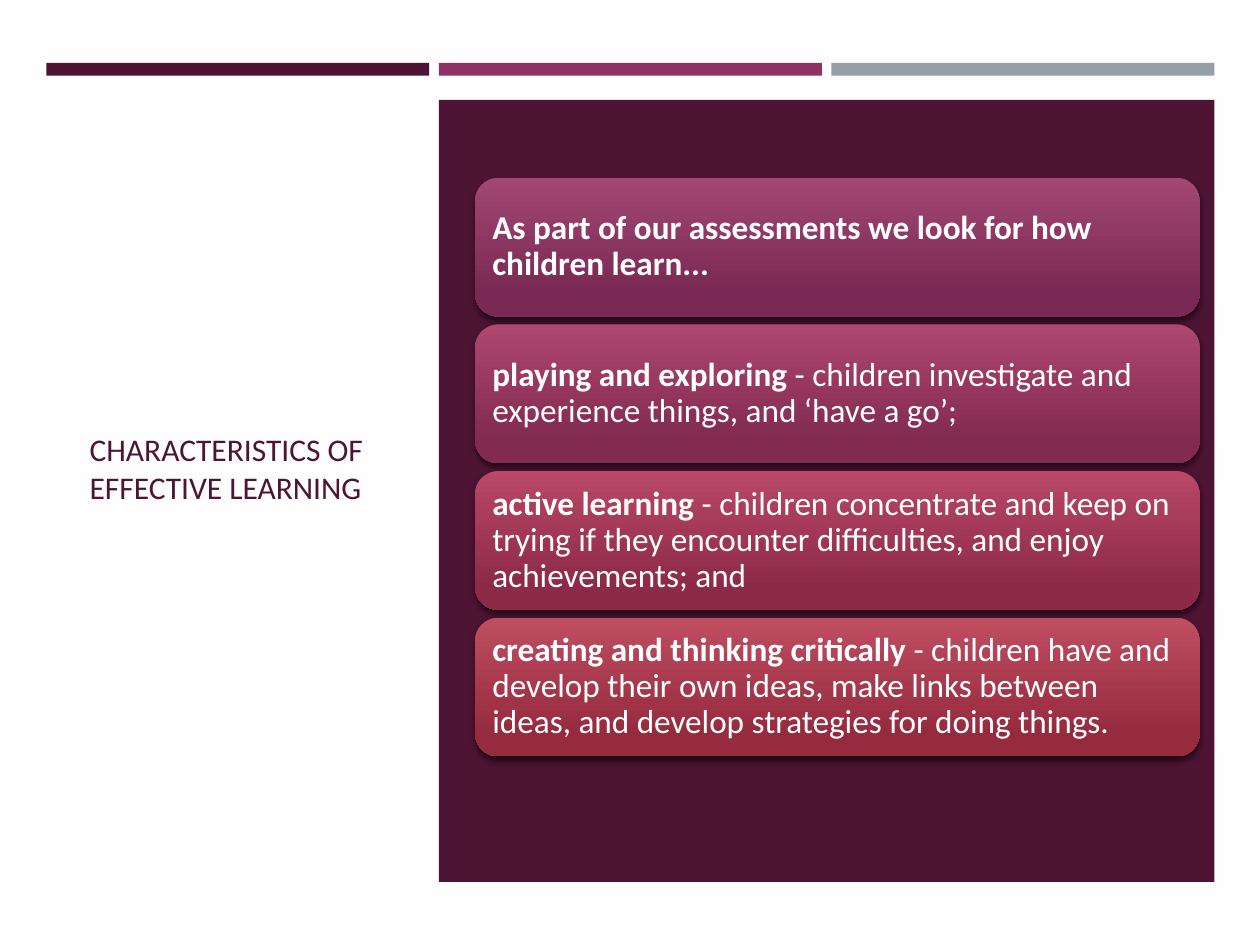
import pptx
import pptx.util
import pptx.dml.color
import pptx.enum.shapes
import pptx.enum.text
import pptx.oxml
import pptx.oxml.ns

Pt = pptx.util.Pt
RGBColor = pptx.dml.color.RGBColor
MSO_SHAPE = pptx.enum.shapes.MSO_SHAPE
MSO_ANCHOR = pptx.enum.text.MSO_ANCHOR
PP_ALIGN = pptx.enum.text.PP_ALIGN

FONT = "Calibri"
PAPER = RGBColor(0xFF, 0xFE, 0xFF)
WHITE = RGBColor(0xFF, 0xFF, 0xFF)
PLUM = RGBColor(0x4D, 0x14, 0x34)
MAGENTA = RGBColor(0x90, 0x31, 0x63)
GREY = RGBColor(0x96, 0x9F, 0xA7)

BAR_COLORS = [PLUM, MAGENTA, GREY]
BAR_LEFT, BAR_TOP, BAR_WIDTH, BAR_HEIGHT, BAR_STEP = 26.5, 36, 218.8, 7.2, 224.3
CARD_LEFT, CARD_TOP, CARD_WIDTH, CARD_HEIGHT, CARD_STEP = 271.5, 101.6, 414, 79.3, 83.8

CARDS = [
    (RGBColor(0xA2, 0x47, 0x74), RGBColor(0x79, 0x29, 0x53),
     "As part of our assessments we look for how children learn...", ""),
    (RGBColor(0xAE, 0x47, 0x6F), RGBColor(0x82, 0x2A, 0x4F),
     "playing and exploring ",
     "- children investigate and experience things, and ‘have a go’;"),
    (RGBColor(0xB9, 0x48, 0x67), RGBColor(0x8C, 0x2A, 0x48),
     "active learning ",
     "- children concentrate and keep on trying if they encounter difficulties, "
     "and enjoy achievements; and"),
    (RGBColor(0xBF, 0x4E, 0x61), RGBColor(0x96, 0x2A, 0x3F),
     "creating and thinking critically ",
     "- children have and develop their own ideas, make links between ideas, "
     "and develop strategies for doing things."),
]


def set_font(p, size, color):
    p.alignment = PP_ALIGN.LEFT
    p.font.name = FONT
    p.font.size = Pt(size)
    p.font.color.rgb = color


def add_block(s, kind, left, top, width, height):
    sp = s.shapes.add_shape(kind, Pt(left), Pt(top), Pt(width), Pt(height))
    sp.line.fill.background()
    sp.shadow.inherit = False
    return sp


def add_bar(s, left, top, width, height, color):
    sp = add_block(s, MSO_SHAPE.RECTANGLE, left, top, width, height)
    sp.fill.solid()
    sp.fill.fore_color.rgb = color


def add_shadow(sp):
    effects = sp.element.spPr.find(pptx.oxml.ns.qn("a:effectLst"))
    effects.append(pptx.oxml.parse_xml(
        f'<a:outerShdw {pptx.oxml.ns.nsdecls("a")} blurRad="{Pt(3)}" dist="{Pt(2)}" '
        'dir="5400000" rotWithShape="0"><a:srgbClr val="000000">'
        '<a:alpha val="55000"/></a:srgbClr></a:outerShdw>'))


def add_card(s, top, light, dark, lead, detail):
    sp = add_block(s, MSO_SHAPE.ROUNDED_RECTANGLE, CARD_LEFT, top, CARD_WIDTH, CARD_HEIGHT)
    sp.fill.gradient()
    sp.fill.gradient_angle = 270
    for stop, position, color in zip(sp.fill.gradient_stops, (0, 0.84), (light, dark)):
        stop.position = position
        stop.color.rgb = color
    add_shadow(sp)
    tf = sp.text_frame
    tf.word_wrap = True
    tf.vertical_anchor = MSO_ANCHOR.MIDDLE
    tf.margin_left = tf.margin_right = tf.margin_top = tf.margin_bottom = Pt(6)
    p = tf.paragraphs[0]
    p.line_spacing = 0.9
    set_font(p, 19, WHITE)
    for text, bold in ((lead, True), (detail, False)):
        if text:
            r = p.add_run()
            r.text = text
            r.font.bold = bold


def set_title(s, text):
    sp = s.shapes.title
    sp.left, sp.top, sp.width, sp.height = Pt(44), Pt(82), Pt(180), Pt(371)
    tf = sp.text_frame
    tf.text = text
    tf.word_wrap = True
    tf.vertical_anchor = MSO_ANCHOR.MIDDLE
    set_font(tf.paragraphs[0], 18, PLUM)


def main():
    prs = pptx.Presentation()
    prs.slide_width, prs.slide_height = Pt(720), Pt(540)
    s = prs.slides.add_slide(prs.slide_layouts[5])
    s.background.fill.solid()
    s.background.fill.fore_color.rgb = PAPER
    set_title(s, "CHARACTERISTICS OF EFFECTIVE LEARNING")
    for i, color in enumerate(BAR_COLORS):
        add_bar(s, BAR_LEFT + i * BAR_STEP, BAR_TOP, BAR_WIDTH, BAR_HEIGHT, color)
    add_bar(s, BAR_LEFT + BAR_STEP, 57, BAR_STEP + BAR_WIDTH, 447, PLUM)
    for i, card in enumerate(CARDS):
        add_card(s, CARD_TOP + i * CARD_STEP, *card)
    prs.save("out.pptx")


if __name__ == "__main__":
    main()
